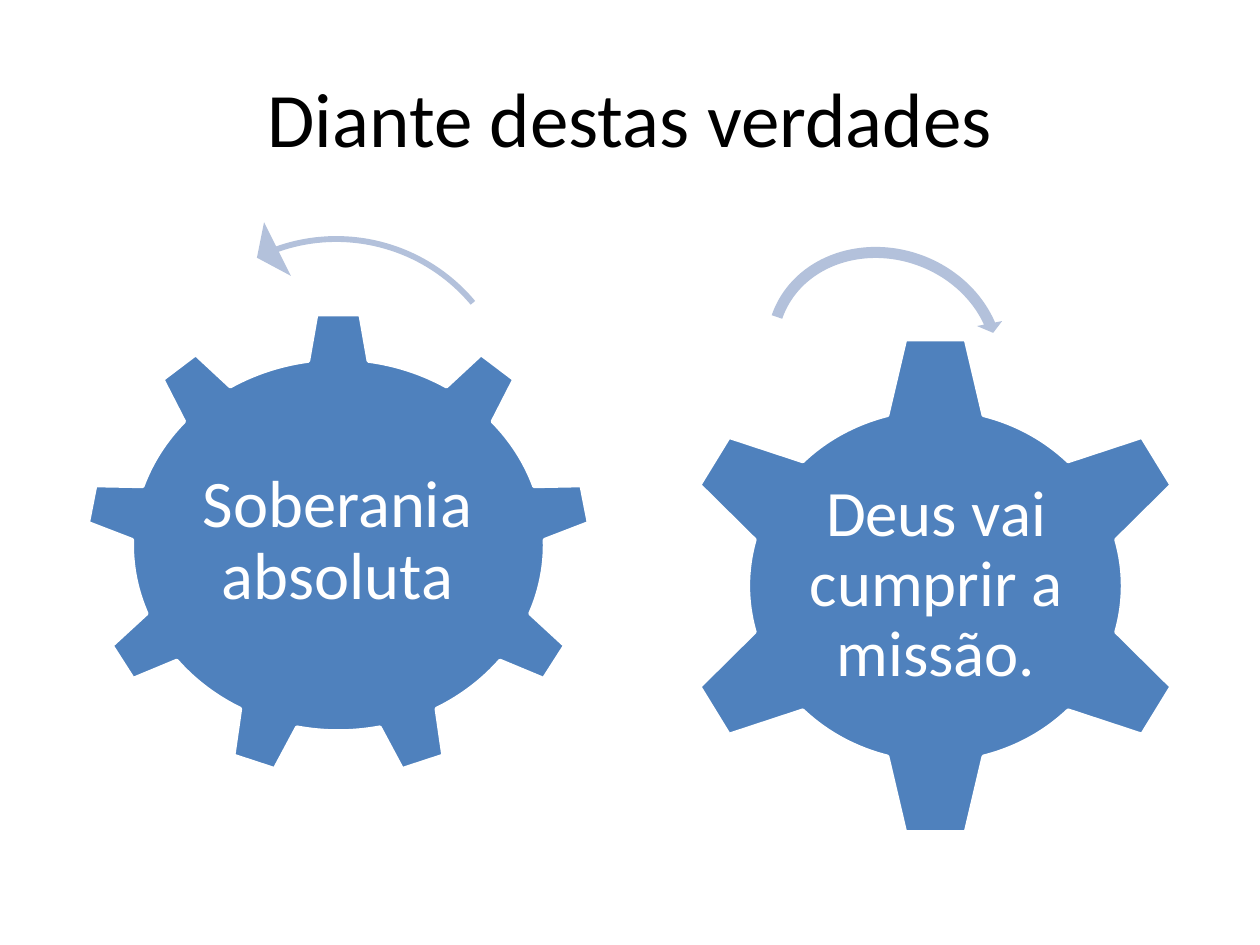
from pptx import Presentation
from pptx.dml.color import RGBColor
from pptx.enum.shapes import MSO_SHAPE
from pptx.enum.text import MSO_ANCHOR, PP_ALIGN
from pptx.util import Pt

GEAR_6, GEAR_9 = MSO_SHAPE.GEAR_6, MSO_SHAPE.GEAR_9
ARROW_RIGHT, ARROW_LEFT = MSO_SHAPE.CIRCULAR_ARROW, MSO_SHAPE.LEFT_CIRCULAR_ARROW
MIDDLE, CENTER = MSO_ANCHOR.MIDDLE, PP_ALIGN.CENTER


def rgb(value):
    """Turn a hex string into a colour."""
    return RGBColor.from_string(value)


class GearSlide:
    """Hold the style and the current slide."""

    font, black, white = "Calibri", "000000", "FFFFFF"
    blue, pale = "4F81BD", "B3C1DB"

    def __init__(self, prs):
        """Add a blank slide."""
        self.s = prs.slides.add_slide(prs.slide_layouts[6])

    def text(self, shapes, box, text, size, color, inset, spacing=1.0):
        """Add a centred text box."""
        tf = shapes.add_textbox(*map(Pt, box)).text_frame
        tf.text = text
        tf.word_wrap = True
        tf.vertical_anchor = MIDDLE
        tf.margin_left = tf.margin_right = Pt(inset[0])
        tf.margin_top = tf.margin_bottom = Pt(inset[1])
        p = tf.paragraphs[0]
        p.alignment = CENTER
        p.line_spacing = spacing
        font = p.runs[0].font
        font.name, font.size = self.font, Pt(size)
        font.color.rgb = rgb(color)

    def title(self, text):
        """Add the slide title."""
        self.text(self.s.shapes, (36, 21.6, 648, 90), text, 44, self.black, (7.2, 3.6))

    def shape(self, shapes, kind, box, fill):
        """Add a flat filled shape."""
        sp = shapes.add_shape(kind, *map(Pt, box))
        sp.shadow.inherit = False
        sp.fill.solid()
        sp.fill.fore_color.rgb = rgb(fill)
        return sp

    def gear(self, kind, box, label, label_box, size):
        """Add a gear grouped with its label."""
        shapes = self.s.shapes.add_group_shape().shapes
        sp = self.shape(shapes, kind, box, self.blue)
        sp.line.color.rgb = rgb(self.white)
        sp.line.width = Pt(2)
        self.text(shapes, label_box, label, size, self.white, (3.6, 3.6), 0.9)

    def arrow(self, kind, box, rotation, adjustments):
        """Add a curved arrow showing the direction of turn."""
        sp = self.shape(self.s.shapes, kind, box, self.pale)
        sp.line.fill.background()
        sp.rotation = rotation
        for i, value in enumerate(adjustments):
            sp.adjustments[i] = value


def main():
    """Build and save the slide."""
    prs = Presentation()
    prs.slide_width, prs.slide_height = Pt(720), Pt(540)
    slide = GearSlide(prs)
    slide.title("Diante destas verdades")
    slide.gear(GEAR_6, (384.5, 190.8, 300.2, 288), "Deus vai cumprir a missão.",
               (458.6, 263.5, 152.6, 141.8), 37)
    slide.gear(GEAR_9, (49, 178.6, 288.7, 265.7), "Soberania absoluta",
               (105.1, 241.2, 175.7, 136.8), 38)
    slide.arrow(ARROW_LEFT, (73.4, 119.5, 237.6, 237.6), 76.1,
                (0.014, 4.3, 104.73, 146.4, 0.072))
    slide.arrow(ARROW_RIGHT, (441.4, 129.6, 128.9, 145.4), 289.5,
                (0.049, 3.13, 32.52, 161.65, 0.057))
    prs.save("out.pptx")


if __name__ == "__main__":
    main()
